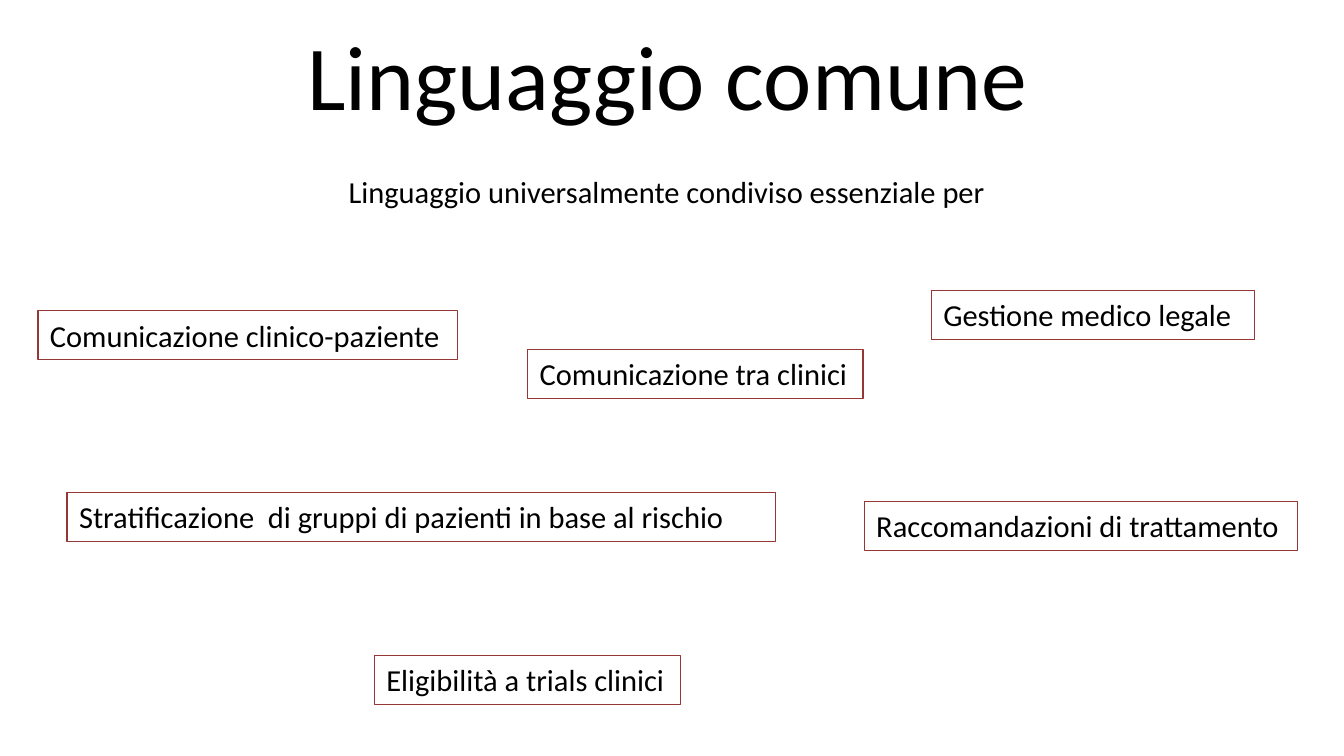
from pptx import Presentation
from pptx.dml.color import RGBColor as RGB
from pptx.enum.shapes import MSO_SHAPE as SHAPE
from pptx.enum.text import MSO_ANCHOR as ANCHOR, PP_ALIGN as ALIGN
from pptx.util import Pt

COLORS = {"text": "000000", "border": "953735", "background": "FFFFFF"}
FONT = "Calibri"
BOX_HEIGHT = 29.1

PURPOSES = [
    ("Comunicazione clinico-paziente", 22.4, 183.4, 247.8),
    ("Comunicazione tra clinici", 311.5, 206.2, 198),
    ("Gestione medico legale", 549.8, 171.4, 190.8),
    ("Stratificazione  di gruppi di pazienti in base al rischio", 39.6, 290.6, 418.3),
    ("Raccomandazioni di trattamento", 510.2, 295.9, 255.6),
    ("Eligibilità a trials clinici", 221, 386.9, 180.7),
]


def write_text(sp, text, size=18, color="text", align=ALIGN.LEFT):
    tf = sp.text_frame
    tf.word_wrap = True
    tf.vertical_anchor = ANCHOR.TOP
    p = tf.paragraphs[0]
    p.alignment = align
    r = p.add_run()
    r.text = text
    r.font.name = FONT
    r.font.size = Pt(size)
    r.font.color.rgb = RGB.from_string(COLORS[color])


def add_heading(s, left, top, width, height):
    title = s.shapes.add_textbox(Pt(left), Pt(top), Pt(width), Pt(72.7))
    write_text(title, "Linguaggio comune", size=54)
    subtitle = s.shapes.add_textbox(
        Pt(left + 24.5), Pt(top + height - BOX_HEIGHT), Pt(394.6), Pt(BOX_HEIGHT))
    write_text(subtitle, "Linguaggio universalmente condiviso essenziale per")


def add_purposes(s, left, top):
    for text, x, y, width in PURPOSES:
        sp = s.shapes.add_shape(
            SHAPE.RECTANGLE, Pt(left + x), Pt(top + y), Pt(width), Pt(BOX_HEIGHT))
        sp.shadow.inherit = False
        sp.fill.background()
        sp.line.color.rgb = RGB.from_string(COLORS["border"])
        sp.line.width = Pt(0.75)
        write_text(sp, text)


def main():
    prs = Presentation()
    prs.slide_width, prs.slide_height = Pt(793.44), Pt(446.4)
    s = prs.slides.add_slide(prs.slide_layouts[6])
    s.background.fill.solid()
    s.background.fill.fore_color.rgb = RGB.from_string(COLORS["background"])
    add_heading(s, 174.2, 7.9, 443.5, 119.8)
    add_purposes(s, 0, 0)
    prs.save("out.pptx")


if __name__ == "__main__":
    main()
